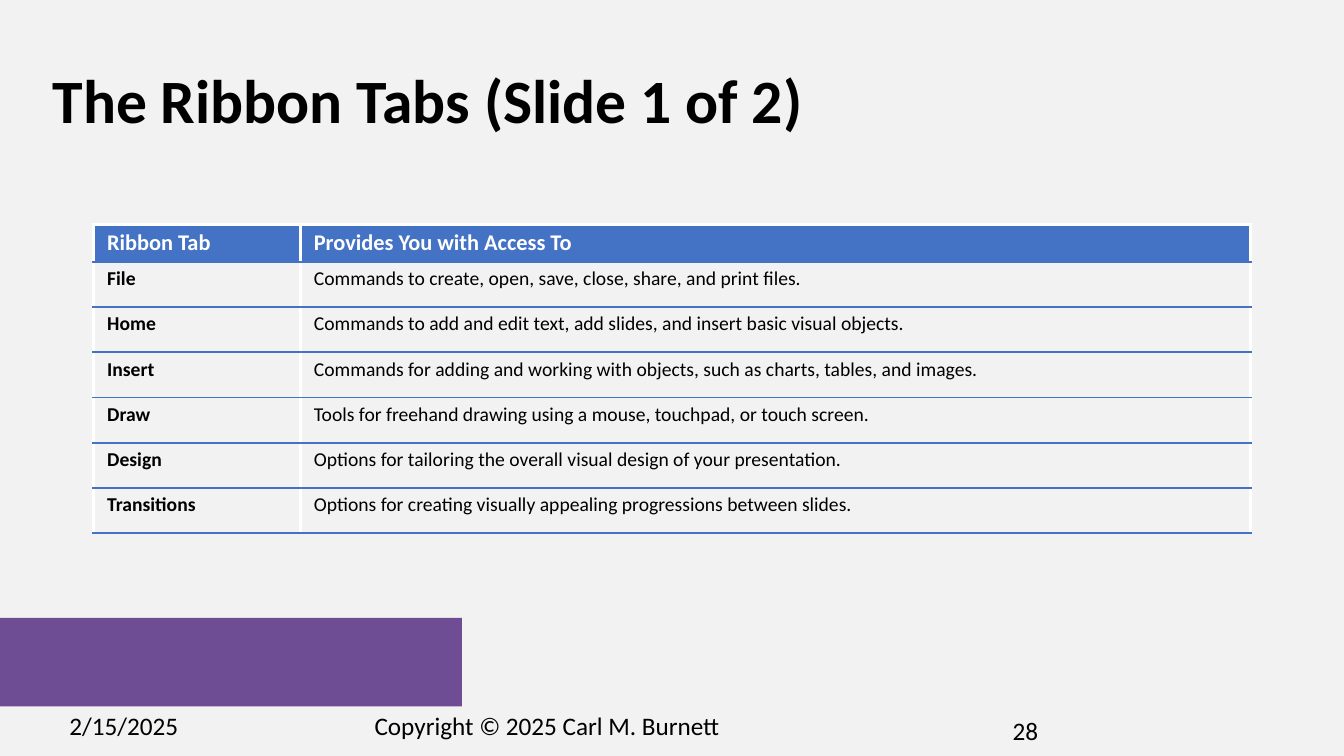
from dataclasses import dataclass

from lxml import etree
from pptx import Presentation
from pptx.dml.color import RGBColor
from pptx.enum.shapes import MSO_SHAPE
from pptx.enum.text import MSO_ANCHOR, MSO_AUTO_SIZE, PP_ALIGN
from pptx.oxml.ns import qn
from pptx.util import Cm, Pt

RECTANGLE = MSO_SHAPE.RECTANGLE
TOP, MIDDLE = MSO_ANCHOR.TOP, MSO_ANCHOR.MIDDLE
LEFT = PP_ALIGN.LEFT
NO_AUTOFIT = MSO_AUTO_SIZE.NONE
TITLE_ONLY = 5


@dataclass(frozen=True)
class Theme:
    font: str = "Calibri"
    background: str = "F2F2F2"
    text: str = "000000"
    white: str = "FFFFFF"
    blue: str = "4472C4"
    purple: str = "6E4D94"
    title_size: int = 44
    footer_size: int = 18
    header_size: int = 16
    body_size: int = 14
    side_border: float = 2.25
    row_border: float = 1.5


THEME = Theme()

HEADER = ("Ribbon Tab", "Provides You with Access To")
RIBBON_TABS = [
    ("File", "Commands to create, open, save, close, share, and print files."),
    ("Home", "Commands to add and edit text, add slides, and insert basic visual objects."),
    ("Insert", "Commands for adding and working with objects, such as charts, tables, and images."),
    ("Draw", "Tools for freehand drawing using a mouse, touchpad, or touch screen."),
    ("Design", "Options for tailoring the overall visual design of your presentation."),
    ("Transitions", "Options for creating visually appealing progressions between slides."),
]
COLUMN_WIDTHS = (Cm(5.21), Cm(23.95))
HEADER_HEIGHT, ROW_HEIGHT = Cm(0.94), Cm(1.14)


def set_fill(fill, color):
    fill.solid()
    fill.fore_color.rgb = RGBColor.from_string(color)


def write(text_frame, text, size, color=THEME.text, bold=False):
    text_frame.text = text
    paragraph = text_frame.paragraphs[0]
    paragraph.alignment = LEFT
    font = paragraph.runs[0].font
    font.name, font.size, font.bold = THEME.font, Pt(size), bold
    font.color.rgb = RGBColor.from_string(color)
    return paragraph


def place(shape, left, top, width, height):
    shape.left, shape.top, shape.width, shape.height = left, top, width, height


def format_title(title, text):
    place(title, Cm(1.07), Cm(1.45), Cm(30.05), Cm(2.34))
    paragraph = write(title.text_frame, text, THEME.title_size, bold=True)
    paragraph.line_spacing = 0.9
    title.text_frame.vertical_anchor = MIDDLE
    title.text_frame.auto_size = NO_AUTOFIT


def add_footer_text(slide, text, left, top, width):
    text_frame = slide.shapes.add_textbox(left, top, width, Cm(1.02)).text_frame
    text_frame.word_wrap = True
    write(text_frame, text, THEME.footer_size)


def add_band(slide):
    band = slide.shapes.add_shape(RECTANGLE, Cm(0), Cm(15.57), Cm(11.64), Cm(2.23))
    band.shadow.inherit = False
    set_fill(band.fill, THEME.purple)
    band.line.fill.background()


def add_border(cell, side, color, width):
    """Draw one cell border; side is L, R, T or B, in that order."""
    properties = cell._tc.get_or_add_tcPr()
    line = etree.SubElement(properties, qn(f"a:ln{side}"), w=str(Pt(width)))
    fill = etree.SubElement(line, qn("a:solidFill"))
    etree.SubElement(fill, qn("a:srgbClr"), val=color)


def format_cell(cell, text, is_header, is_first_column):
    if is_header:
        size, color, fill, anchor = THEME.header_size, THEME.white, THEME.blue, MIDDLE
        top_border = (THEME.white, THEME.side_border)
    else:
        size, color, fill, anchor = THEME.body_size, THEME.text, THEME.background, TOP
        top_border = (THEME.blue, THEME.row_border)
    write(cell.text_frame, text, size, color, bold=is_header or is_first_column)
    cell.vertical_anchor = anchor
    cell.margin_left = cell.margin_right = Cm(0.34)
    cell.margin_top = cell.margin_bottom = Cm(0.13)
    for side in "LR":
        add_border(cell, side, THEME.white, THEME.side_border)
    add_border(cell, "T", *top_border)
    add_border(cell, "B", THEME.blue, THEME.row_border)
    set_fill(cell.fill, fill)


def add_ribbon_table(slide):
    rows = [HEADER, *RIBBON_TABS]
    height = HEADER_HEIGHT + ROW_HEIGHT * len(RIBBON_TABS)
    table = slide.shapes.add_table(
        len(rows), len(HEADER), Cm(2.36), Cm(5.65), sum(COLUMN_WIDTHS), height
    ).table
    table.horz_banding = False
    for column, width in zip(table.columns, COLUMN_WIDTHS):
        column.width = width
    for row_index, texts in enumerate(rows):
        is_header = row_index == 0
        table.rows[row_index].height = HEADER_HEIGHT if is_header else ROW_HEIGHT
        for column_index, text in enumerate(texts):
            cell = table.cell(row_index, column_index)
            format_cell(cell, text, is_header, column_index == 0)


def main():
    presentation = Presentation()
    presentation.slide_width, presentation.slide_height = Cm(33.87), Cm(19.05)
    slide = presentation.slides.add_slide(presentation.slide_layouts[TITLE_ONLY])
    set_fill(slide.background.fill, THEME.background)
    add_band(slide)
    format_title(slide.shapes.title, "The Ribbon Tabs (Slide 1 of 2)")
    add_ribbon_table(slide)
    add_footer_text(slide, "2/15/2025", Cm(1.5), Cm(17.78), Cm(6.12))
    add_footer_text(slide, "Copyright © 2025 Carl M. Burnett", Cm(9.19), Cm(17.78), Cm(15.49))
    add_footer_text(slide, "28", Cm(25.27), Cm(17.91), Cm(7.9))
    presentation.save("out.pptx")


if __name__ == "__main__":
    main()
